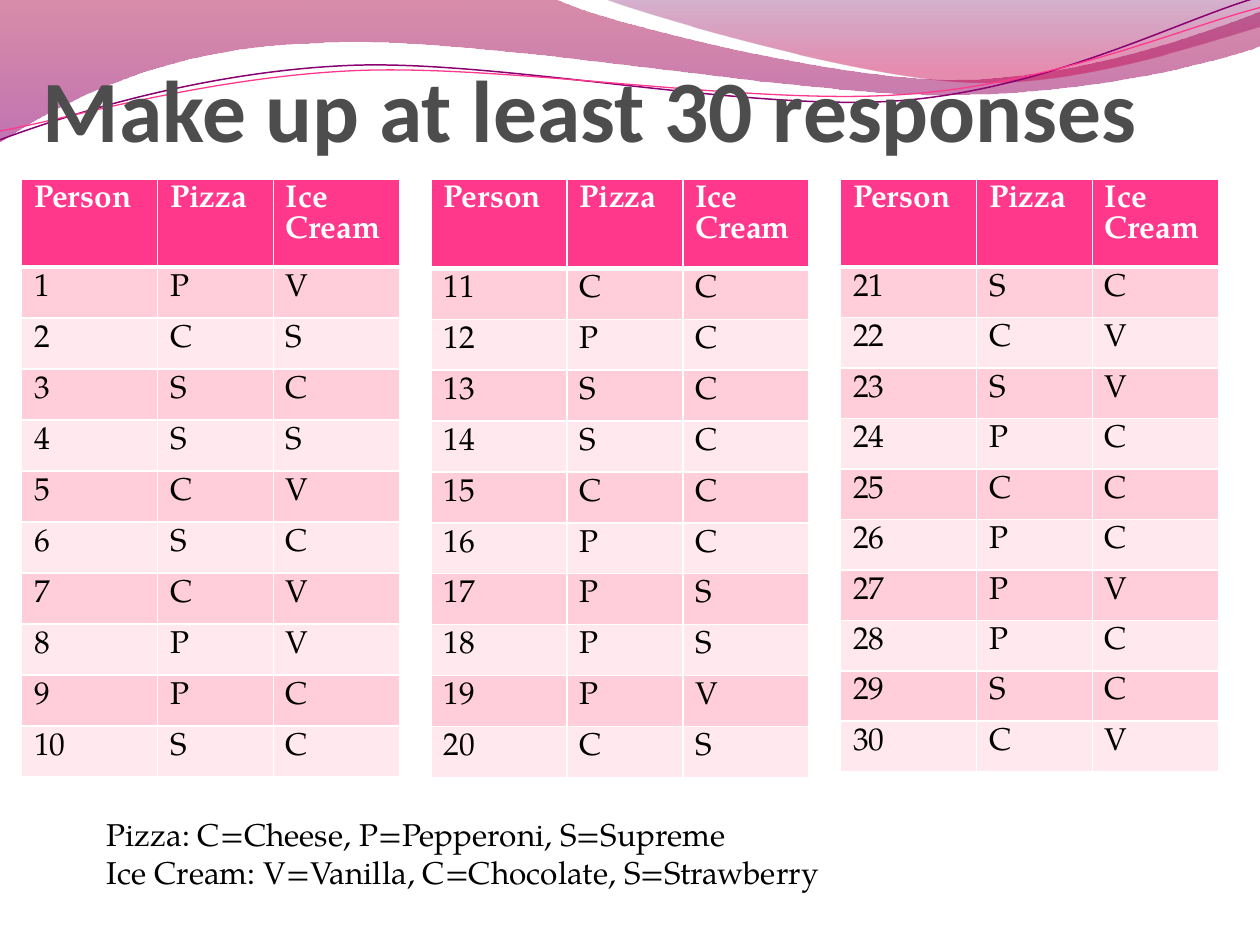
"""Build the slide of thirty survey responses on pizza and ice cream."""
import math
from dataclasses import dataclass
from typing import Optional

import lxml.etree
import pptx
import pptx.dml.color
import pptx.enum.text
import pptx.oxml.ns
import pptx.util

Inches = pptx.util.Inches
RGBColor = pptx.dml.color.RGBColor
Anchor = pptx.enum.text.MSO_ANCHOR
qn = pptx.oxml.ns.qn

WHITE = RGBColor(0xFF, 0xFF, 0xFF)
BLACK = RGBColor(0x00, 0x00, 0x00)
TITLE_GRAY = RGBColor(0x4D, 0x4D, 0x4D)
HOT_PINK = RGBColor(0xFF, 0x38, 0x8C)
PINK_BAND = RGBColor(0xFF, 0xCE, 0xDA)
PALE_BAND = RGBColor(0xFF, 0xE8, 0xEE)
CRIMSON = RGBColor(0xA9, 0x00, 0x42)
MAGENTA = RGBColor(0x8E, 0x00, 0x73)
PLUM = RGBColor(0x73, 0x00, 0x5E)
ROSE = RGBColor(0xC9, 0x00, 0x4F)
PURPLE = RGBColor(0x8A, 0x00, 0x70)

BODY_FONT = "TeX Gyre Pagella"
HEADINGS = ("Person", "Pizza", "Ice Cream")
COLUMN_WIDTHS = (1.08, 0.92, 1.0)
TABLE_TOP = 1.42


@dataclass(frozen=True)
class GradientStop:
    position: float
    color: RGBColor
    opacity: int


@dataclass(frozen=True)
class Wave:
    box: tuple
    points: tuple
    gradient: tuple = ()
    line_color: Optional[RGBColor] = None
    line_width: float = 0
    rotation: float = 0


@dataclass(frozen=True)
class ResponseTable:
    left: float
    first_person: int
    height: float
    header_height: float
    body_height: float
    answers: str


WAVES = (
    Wave((-0.01, -0.01, 10.02, 1.14),
         ((0, 0), (4.4, -0.01),
          ((4.76, 0.17), (6.64, 0.63), (7.58, 0.63)),
          ((8.53, 0.63), (9.58, 0.26), (10, 0.09)), (10.01, 0.36),
          ((9.83, 0.44), (8.7, 0.76), (7.46, 0.75)),
          ((6.22, 0.75), (3.82, 0.28), (2.57, 0.34)),
          ((1.29, 0.36), (0.46, 0.83), (-0.01, 1.13))),
         gradient=(GradientStop(0, CRIMSON, 45), GradientStop(1, MAGENTA, 55))),
    Wave((4.79, -0.01, 5.21, 0.7),
         ((4.79, -0.01),
          ((5.09, 0.11), (6.82, 0.62), (7.69, 0.65)),
          ((8.56, 0.69), (9.61, 0.32), (10, 0.21)), (10, 0)),
         gradient=(GradientStop(0, PLUM, 30), GradientStop(0.8, ROSE, 45))),
    Wave((-0.02, 0.22, 10.02, 0.71),
         ((0, 1.11),
          ((0.48, 0.93), (1.58, 0.57), (2.77, 0.52)),
          ((3.95, 0.47), (5.93, 0.89), (7.13, 0.8)),
          ((8.33, 0.71), (9.38, 0.15), (9.98, -0.02))),
         line_color=PURPLE, line_width=0.85, rotation=-2.7),
    Wave((-0.02, 0.3, 10.03, 0.58),
         ((0, 1.04),
          ((0.47, 0.96), (1.64, 0.61), (2.83, 0.56)),
          ((4.03, 0.51), (5.97, 0.84), (7.17, 0.75)),
          ((8.36, 0.67), (9.41, 0.21), (10, 0.06))),
         line_color=HOT_PINK, line_width=0.75, rotation=-2.7),
)

TABLES = (
    ResponseTable(0.17, 1, 4.76, 0.41, 4.05, "PV CS SC SS CV SC CV PV PC SC"),
    ResponseTable(3.42, 11, 4.75, 0.71, 4.04, "CC PC SC SC CC PC PS PS PV CS"),
    ResponseTable(6.67, 21, 4.7, 0.4, 4.0, "SC CV SV PC CC PC PV PC SC CV"),
)


def to_local(wave: Wave, point: tuple) -> tuple:
    """Return a slide point in EMU inside the wave's unrotated box."""
    left, top, width, height = wave.box
    turn = math.radians(-wave.rotation)
    x, y = point[0] - left - width / 2, point[1] - top - height / 2
    return (Inches(x * math.cos(turn) - y * math.sin(turn) + width / 2),
            Inches(x * math.sin(turn) + y * math.cos(turn) + height / 2))


def draw_wave(slide, wave: Wave) -> None:
    """Draw a translucent gradient band or a thin curved line."""
    steps = [step if isinstance(step[0], tuple) else (step,) for step in wave.points]
    start, *ends = [to_local(wave, step[-1]) for step in steps]
    builder = slide.shapes.build_freeform(*start)
    builder.add_line_segments(ends, close=bool(wave.gradient))
    ribbon = builder.convert_to_shape()
    ribbon.left, ribbon.top, ribbon.width, ribbon.height = map(Inches, wave.box)
    ribbon.rotation = wave.rotation
    outline = next(ribbon._element.iter(qn("a:path")))
    outline.set("w", str(ribbon.width))
    outline.set("h", str(ribbon.height))
    for segment, step in zip(list(outline), steps):
        segment.clear()
        if len(step) == 3:
            curve = lxml.etree.Element(qn("a:cubicBezTo"))
            outline.replace(segment, curve)
            segment = curve
        for x, y in (to_local(wave, point) for point in step):
            lxml.etree.SubElement(segment, qn("a:pt"), x=str(x), y=str(y))
    ribbon.shadow.inherit = False
    if not wave.gradient:
        ribbon.fill.background()
        ribbon.line.color.rgb = wave.line_color
        ribbon.line.width = pptx.util.Pt(wave.line_width)
        return
    ribbon.line.fill.background()
    ribbon.fill.gradient()
    ribbon.fill.gradient_angle = 270
    for stop, wanted in zip(ribbon.fill.gradient_stops, wave.gradient):
        stop.position = wanted.position
        stop.color.rgb = wanted.color
    for color, wanted in zip(ribbon._element.spPr.iter(qn("a:srgbClr")), wave.gradient):
        lxml.etree.SubElement(color, qn("a:alpha"), val=str(wanted.opacity * 1000))


def write_text(frame, text: str, *, size: float = 18, font: str = BODY_FONT,
               color: RGBColor = BLACK, bold: bool = False) -> None:
    """Fill a text frame, one paragraph for each line of text."""
    frame.word_wrap = True
    frame.text = text
    for paragraph in frame.paragraphs:
        for run in paragraph.runs:
            run.font.size = pptx.util.Pt(size)
            run.font.name = font
            run.font.bold = bold
            run.font.color.rgb = color


def add_text_box(slide, left: float, top: float, width: float, height: float):
    """Add a text box and return its frame."""
    return slide.shapes.add_textbox(
        Inches(left), Inches(top), Inches(width), Inches(height)).text_frame


def set_borders(cell, top: float, bottom: float) -> None:
    """Give a cell white borders, with top and bottom widths in points."""
    properties = cell._tc.get_or_add_tcPr()
    for side, width in (("L", 1), ("R", 1), ("T", top), ("B", bottom)):
        line = lxml.etree.SubElement(properties, qn(f"a:ln{side}"),
                                     w=str(pptx.util.Pt(width)))
        fill = lxml.etree.SubElement(line, qn("a:solidFill"))
        lxml.etree.SubElement(fill, qn("a:srgbClr"), val=str(WHITE))


def draw_table(slide, responses: ResponseTable) -> None:
    """Draw one table of numbered responses."""
    people = list(enumerate(responses.answers.split(), responses.first_person))
    rows = [HEADINGS, *((str(person), *answer) for person, answer in people)]
    heights = [responses.header_height] + [responses.body_height / len(people)] * len(people)
    holder = slide.shapes.add_table(
        len(rows), len(HEADINGS), Inches(responses.left), Inches(TABLE_TOP),
        Inches(sum(COLUMN_WIDTHS)), Inches(responses.height))
    table = holder.table
    for column, width in zip(table.columns, COLUMN_WIDTHS):
        column.width = Inches(width)
    for index, (values, height) in enumerate(zip(rows, heights)):
        table.rows[index].height = Inches(height)
        header = index == 0
        band = HOT_PINK if header else PINK_BAND if index % 2 else PALE_BAND
        for column, value in enumerate(values):
            cell = table.cell(index, column)
            set_borders(cell, top=3 if index == 1 else 1, bottom=3 if header else 1)
            cell.fill.solid()
            cell.fill.fore_color.rgb = band
            write_text(cell.text_frame, value, bold=header, color=WHITE if header else BLACK)
    holder.height = Inches(responses.height)


def main() -> None:
    """Build and save the slide."""
    deck = pptx.Presentation()
    deck.slide_width, deck.slide_height = Inches(10), Inches(7.5)
    slide = deck.slides.add_slide(deck.slide_layouts[6])
    for wave in WAVES:
        draw_wave(slide, wave)
    title = add_text_box(slide, 0.34, 0.02, 9, 1.25)
    title.margin_left = title.margin_right = title.margin_bottom = 0
    title.vertical_anchor = Anchor.BOTTOM
    write_text(title, "Make up at least 30 responses", size=50, font="Calibri",
               color=TITLE_GRAY, bold=True)
    for responses in TABLES:
        draw_table(slide, responses)
    write_text(add_text_box(slide, 0.75, 6.42, 8.08, 0.71),
               "Pizza: C=Cheese, P=Pepperoni, S=Supreme\n"
               "Ice Cream: V=Vanilla, C=Chocolate, S=Strawberry")
    deck.save("out.pptx")


if __name__ == "__main__":
    main()
